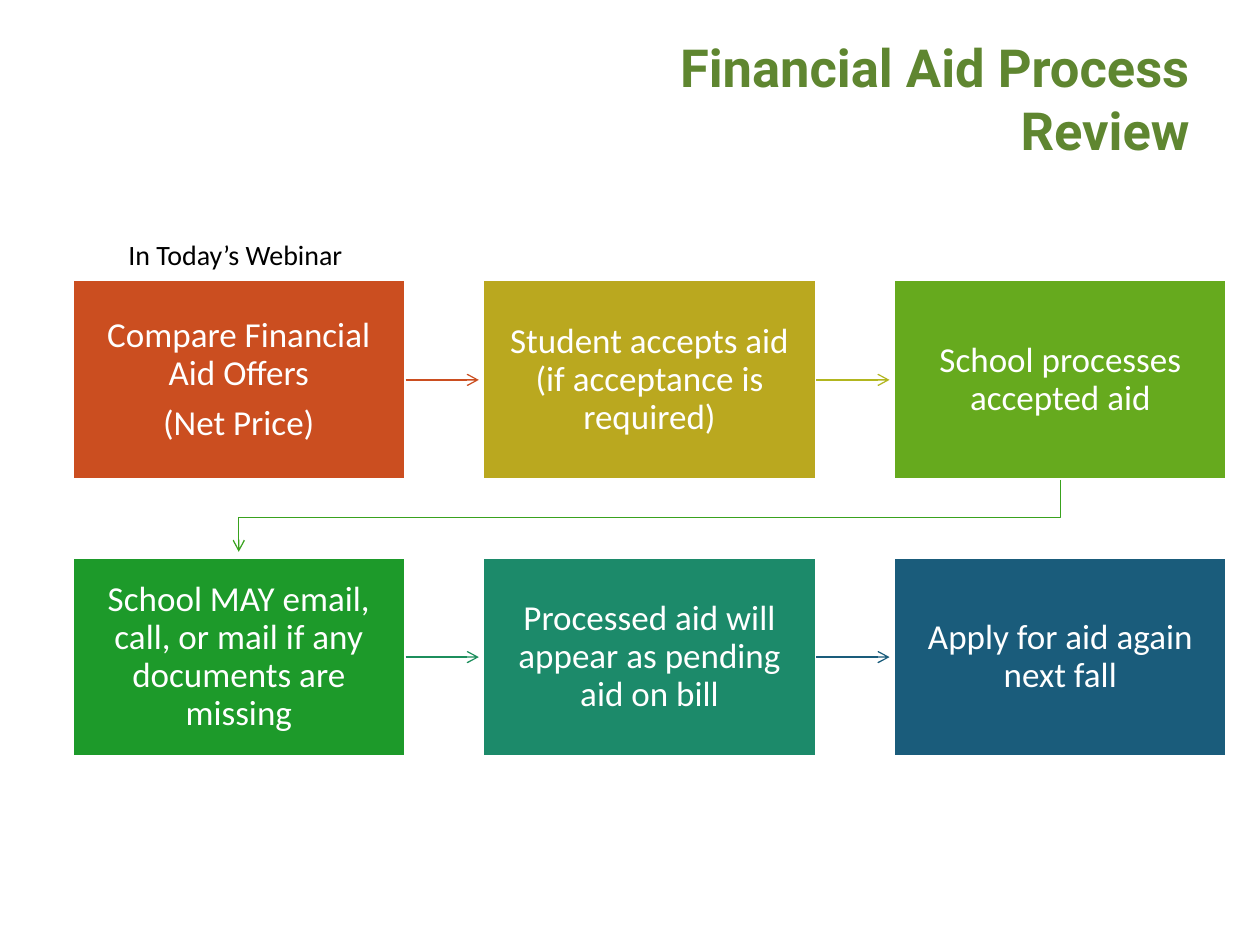
"""Build the financial aid process review slide."""
from dataclasses import dataclass

import pptx
import pptx.dml.color
import pptx.enum.shapes
import pptx.enum.text
import pptx.oxml
import pptx.oxml.ns
import pptx.util
from lxml import etree

Inches = pptx.util.Inches
Pt = pptx.util.Pt
RGBColor = pptx.dml.color.RGBColor
PP_ALIGN = pptx.enum.text.PP_ALIGN
MSO_ANCHOR = pptx.enum.text.MSO_ANCHOR
qn = pptx.oxml.ns.qn

WHITE = RGBColor(0xFF, 0xFF, 0xFF)
BLACK = RGBColor(0x00, 0x00, 0x00)
TITLE_GREEN = RGBColor(0x5F, 0x86, 0x30)
RUST = RGBColor(0xCB, 0x4E, 0x20)
MUSTARD = RGBColor(0xBA, 0xA8, 0x1F)
OLIVE = RGBColor(0xB2, 0xB6, 0x1F)
LIME = RGBColor(0x66, 0xAA, 0x1E)
LEAF = RGBColor(0x39, 0xA2, 0x1E)
GREEN = RGBColor(0x1D, 0x9A, 0x2A)
JADE = RGBColor(0x1C, 0x8E, 0x5C)
TEAL = RGBColor(0x1C, 0x8A, 0x6A)
NAVY = RGBColor(0x1A, 0x5C, 0x7B)

COLUMNS = 3
LEFT, TOP = 0.57, 2.22
BOX_W, BOX_H = 2.65, 1.59
STEP_X, STEP_Y = 3.26, 2.2
ARROW_LENGTH = 0.58


@dataclass(frozen=True)
class Step:
    paragraphs: tuple[str, ...]
    fill: RGBColor
    arrow: RGBColor | None = None


STEPS = (
    Step(("Compare Financial Aid Offers", "(Net Price)"), RUST, RUST),
    Step(("Student accepts aid (if acceptance is required)",), MUSTARD, OLIVE),
    Step(("School processes accepted aid",), LIME, LEAF),
    Step(("School MAY email, call, or mail if any documents are missing",), GREEN, JADE),
    Step(("Processed aid will appear as pending aid on bill",), TEAL, NAVY),
    Step(("Apply for aid again next fall",), NAVY),
)


def style_arrow(sp, color: RGBColor) -> None:
    """Give a line its colour, open arrowhead and no shadow."""
    sp.line.color.rgb = color
    sp.line.width = Pt(0.75)
    spPr = sp.element.spPr
    etree.SubElement(spPr.find(qn("a:ln")), qn("a:tailEnd"), type="arrow")
    etree.SubElement(spPr, qn("a:effectLst"))


def add_straight_arrow(shapes, x: float, y: float, color: RGBColor) -> None:
    """Draw an arrow from one step to the next in its row."""
    sp = shapes.add_connector(
        pptx.enum.shapes.MSO_CONNECTOR.STRAIGHT,
        Inches(x), Inches(y), Inches(x + ARROW_LENGTH), Inches(y),
    )
    style_arrow(sp, color)


def add_return_arrow(shapes, x: float, y: float, color: RGBColor) -> None:
    """Draw the bent arrow from the end of a row to the start of the next."""
    first_x = LEFT + BOX_W / 2
    points = ((x, y + 0.3), (first_x, y + 0.3), (first_x, y + 0.57))
    builder = shapes.build_freeform(Inches(x), Inches(y))
    builder.add_line_segments([(Inches(px), Inches(py)) for px, py in points], close=False)
    sp = builder.convert_to_shape()
    sp.fill.background()
    style_arrow(sp, color)


def add_step(shapes, x: float, y: float, step: Step) -> None:
    """Draw a filled box with the text of one step."""
    sp = shapes.add_shape(
        pptx.enum.shapes.MSO_SHAPE.RECTANGLE,
        Inches(x), Inches(y), Inches(BOX_W), Inches(BOX_H),
    )
    sp.shadow.inherit = False
    sp.fill.solid()
    sp.fill.fore_color.rgb = step.fill
    sp.line.color.rgb = WHITE
    sp.line.width = Pt(2)
    tf = sp.text_frame
    tf.word_wrap = True
    tf.vertical_anchor = MSO_ANCHOR.MIDDLE
    tf.margin_left = tf.margin_right = tf.margin_top = tf.margin_bottom = Inches(0.16)
    tf.text = "\n".join(step.paragraphs)
    for i, p in enumerate(tf.paragraphs):
        p.alignment = PP_ALIGN.CENTER
        p.line_spacing = 0.9
        if i:
            p.space_before = Pt(7)
        p.font.name = "Calibri"
        p.font.size = Pt(20)
        p.font.color.rgb = WHITE


def add_label(shapes, box: tuple[float, float, float, float], text: str, font: str,
              size: float, color: RGBColor, align: PP_ALIGN, bold: bool = False) -> None:
    """Add a one-paragraph text box."""
    tf = shapes.add_textbox(*map(Inches, box)).text_frame
    tf.word_wrap = True
    tf.vertical_anchor = MSO_ANCHOR.MIDDLE
    p = tf.paragraphs[0]
    p.text = text
    p.alignment = align
    p.font.name = font
    p.font.size = Pt(size)
    p.font.bold = bold
    p.font.color.rgb = color


def main() -> None:
    """Create and save the presentation."""
    prs = pptx.Presentation()
    prs.slide_width, prs.slide_height = Inches(10), Inches(7.5)
    shapes = prs.slides.add_slide(prs.slide_layouts[6]).shapes
    add_label(shapes, (4.42, 0.25, 5.12, 1.05), "Financial Aid Process Review",
              "Roboto", 30, TITLE_GREEN, PP_ALIGN.RIGHT, bold=True)
    for i, step in enumerate(STEPS):
        row, column = divmod(i, COLUMNS)
        x, y = LEFT + column * STEP_X, TOP + row * STEP_Y
        add_step(shapes, x, y, step)
        if step.arrow is None:
            continue
        if column < COLUMNS - 1:
            add_straight_arrow(shapes, x + BOX_W, y + BOX_H / 2, step.arrow)
        else:
            add_return_arrow(shapes, x + BOX_W / 2, y + BOX_H, step.arrow)
    add_label(shapes, (0.92, 1.83, 2.08, 0.37), "In Today’s Webinar",
              "Calibri", 16, BLACK, PP_ALIGN.LEFT)
    prs.save("out.pptx")


if __name__ == "__main__":
    main()
